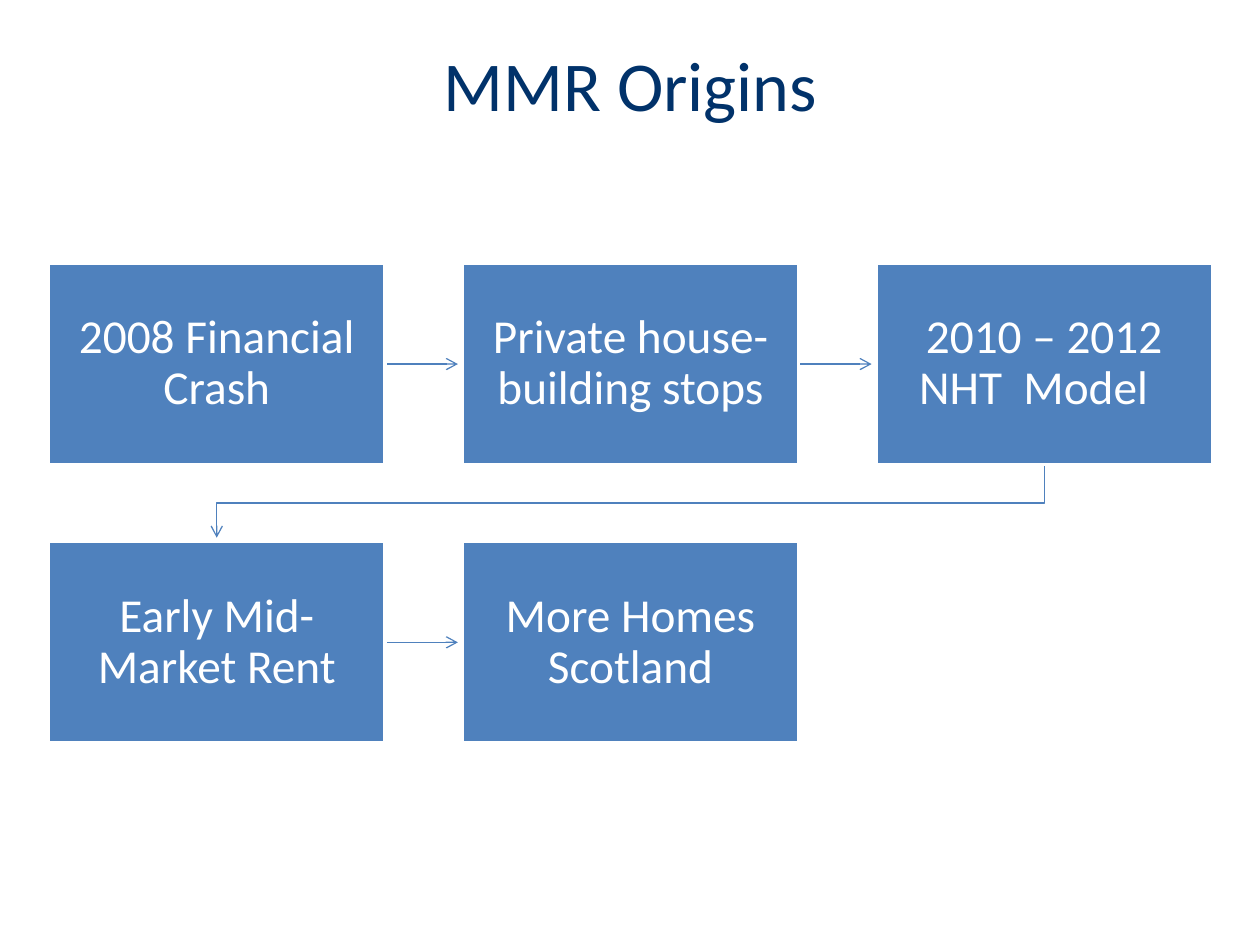
from dataclasses import dataclass

from lxml import etree
from pptx import Presentation
from pptx.dml.color import RGBColor
from pptx.enum.shapes import MSO_CONNECTOR, MSO_SHAPE
from pptx.enum.text import MSO_ANCHOR, PP_ALIGN
from pptx.oxml.ns import qn
from pptx.util import Cm, Pt

RECT = MSO_SHAPE.RECTANGLE
STRAIGHT = MSO_CONNECTOR.STRAIGHT
CENTER = PP_ALIGN.CENTER
TOP, MIDDLE = MSO_ANCHOR.TOP, MSO_ANCHOR.MIDDLE

BLUE = RGBColor(0x4F, 0x81, 0xBD)
NAVY = RGBColor(0x01, 0x32, 0x6A)
WHITE = RGBColor(0xFF, 0xFF, 0xFF)
FONT = "Calibri"

LEFT, TOP_ROW = Cm(0.98), Cm(5.31)
BOX_W, BOX_H = Cm(6.78), Cm(4.06)
PITCH_X, PITCH_Y = Cm(8.34), Cm(5.61)
ARROW_LEN, DROP_LEN, BEND = Cm(1.47), Cm(1.47), Cm(0.77)
INSET = Cm(0.53)
COLUMNS = 3


@dataclass
class Step:
    text: str
    index: int

    @property
    def x(self) -> int:
        return LEFT + self.index % COLUMNS * PITCH_X

    @property
    def y(self) -> int:
        return TOP_ROW + self.index // COLUMNS * PITCH_Y

    @property
    def center_x(self) -> int:
        return self.x + BOX_W // 2


TEXTS = [
    "2008 Financial Crash",
    "Private house-building stops",
    "2010 – 2012 NHT  Model  ",
    "Early Mid-Market Rent",
    "More Homes Scotland",
]
STEPS = [Step(text, i) for i, text in enumerate(TEXTS)]


def style_arrow(sp) -> None:
    sp.line.color.rgb = BLUE
    sp.line.width = Pt(0.75)
    ln = sp.line._get_or_add_ln()
    etree.SubElement(ln, qn("a:tailEnd"), type="arrow")
    etree.SubElement(sp._element.spPr, qn("a:effectLst"))


def add_arrow(s, start: Step, end: Step) -> None:
    if start.y == end.y:
        x, y = start.x + BOX_W, start.y + BOX_H // 2
        sp = s.shapes.add_connector(STRAIGHT, x, y, x + ARROW_LEN, y)
    else:
        y = start.y + BOX_H
        builder = s.shapes.build_freeform(start.center_x, y)
        builder.add_line_segments([
            (start.center_x, y + BEND),
            (end.center_x, y + BEND),
            (end.center_x, y + DROP_LEN),
        ], close=False)
        sp = builder.convert_to_shape()
        sp.fill.background()
    style_arrow(sp)


def set_text(tf, text: str, size: float, color: RGBColor, anchor) -> None:
    tf.word_wrap = True
    tf.vertical_anchor = anchor
    tf.text = text
    p = tf.paragraphs[0]
    p.alignment = CENTER
    r = p.runs[0]
    r.font.name = FONT
    r.font.size = Pt(size)
    r.font.color.rgb = color


def add_step(s, step: Step) -> None:
    sp = s.shapes.add_shape(RECT, step.x, step.y, BOX_W, BOX_H)
    sp.shadow.inherit = False
    sp.fill.solid()
    sp.fill.fore_color.rgb = BLUE
    sp.line.color.rgb = WHITE
    sp.line.width = Pt(2)
    tf = sp.text_frame
    tf.margin_left = tf.margin_right = tf.margin_top = tf.margin_bottom = INSET
    set_text(tf, step.text, 27, WHITE, MIDDLE)
    tf.paragraphs[0].line_spacing = 0.9


def main() -> None:
    prs = Presentation()
    prs.slide_width, prs.slide_height = Cm(25.4), Cm(19.05)
    s = prs.slides.add_slide(prs.slide_layouts[6])
    for start, end in zip(STEPS, STEPS[1:]):
        add_arrow(s, start, end)
    for step in STEPS:
        add_step(s, step)
    title = s.shapes.add_textbox(Cm(0.96), Cm(0.71), Cm(23.5), Cm(3.56))
    set_text(title.text_frame, "MMR Origins", 40, NAVY, TOP)
    prs.save("out.pptx")


if __name__ == "__main__":
    main()
